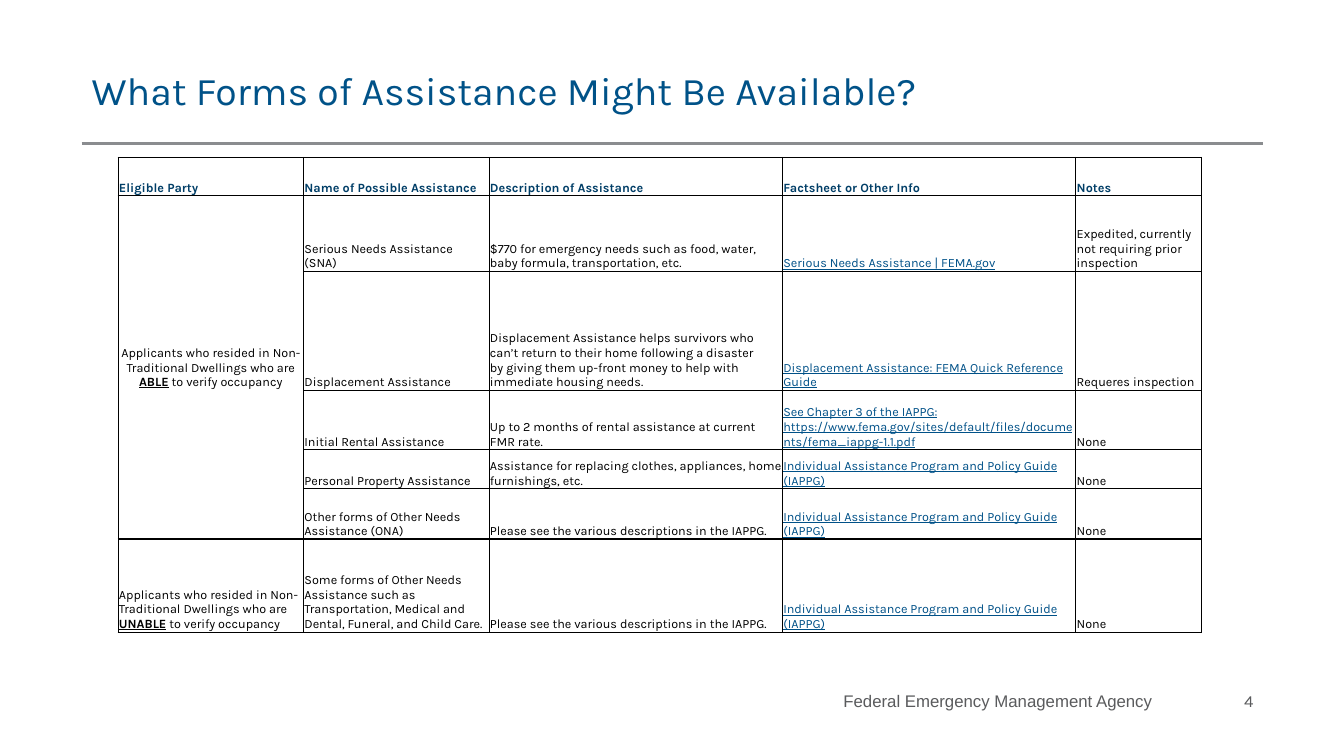
from pptx import Presentation
from pptx.dml.color import RGBColor
from pptx.enum.shapes import MSO_CONNECTOR as Connector
from pptx.enum.text import MSO_ANCHOR as Anchor, MSO_AUTO_SIZE as AutoSize, PP_ALIGN as Align
from pptx.oxml import parse_xml
from pptx.oxml.ns import nsdecls
from pptx.util import Inches, Pt

BLACK, GRAY, RULE_GRAY = "000000", "5A5B5D", "8A8C8F"
TITLE_BLUE, HEADER_BLUE, LINK_BLUE = "005288", "003E67", "005188"
THIN, THICK = 0.5, 1.5
LINK_COLUMN, MERGED_ROWS = 3, (1, 5)

GUIDE = "Individual Assistance Program and Policy Guide (IAPPG)"
SEE_GUIDE = "Please see the various descriptions in the IAPPG."


def color(hex_value):
    return RGBColor.from_string(hex_value)


def applicants(ability):
    return [
        ("Applicants who resided in Non-Traditional Dwellings who are ", {}),
        (ability, {"bold": True, "underline": True}),
        (" to verify occupancy", {}),
    ]


COLUMN_WIDTHS = [1.84, 1.84, 2.91, 2.91, 1.25]
ROW_HEIGHTS = [0.38, 0.75, 1.18, 0.59, 0.39, 0.5, 0.92]
ASSISTANCE = [
    ["Eligible Party", "Name of Possible Assistance", "Description of Assistance",
     "Factsheet or Other Info", "Notes"],
    [applicants("ABLE"), "Serious Needs Assistance (SNA)",
     "$770 for emergency needs such as food, water, baby formula, transportation, etc.",
     "Serious Needs Assistance | FEMA.gov",
     "Expedited, currently not requiring prior inspection"],
    [None, "Displacement Assistance",
     "Displacement Assistance helps survivors who can’t return to their home following a "
     "disaster \nby giving them up-front money to help with immediate housing needs.",
     "Displacement Assistance: FEMA Quick Reference Guide", "Requeres inspection"],
    [None, "Initial Rental Assistance",
     "Up to 2 months of rental assistance at current FMR rate.",
     "See Chapter 3 of the IAPPG: "
     "https://www.fema.gov/sites/default/files/documents/fema_iappg-1.1.pdf", "None"],
    [None, "Personal Property Assistance",
     "Assistance for replacing clothes, appliances, home furnishings, etc.", GUIDE, "None"],
    [None, "Other forms of Other Needs Assistance (ONA)", SEE_GUIDE, GUIDE, "None"],
    [applicants("UNABLE"),
     "Some forms of Other Needs Assistance such as Transportation, Medical and Dental, "
     "Funeral, and Child Care.", SEE_GUIDE, GUIDE, "None"],
]


class SlideBuilder:
    def __init__(self, slide, font="Karla"):
        self.slide = slide
        self.font = font

    def add_text(self, paragraph, runs, text_color, **format_values):
        """Add a string or (text, format) pairs; a newline becomes a line break."""
        for text, extra in [(runs, {})] if isinstance(runs, str) else runs:
            for index, line in enumerate(text.split("\n")):
                if index:
                    paragraph.add_line_break()
                run = paragraph.add_run()
                run.text = line
                run.font.color.rgb = color(text_color)
                for name, value in {"name": self.font, **format_values, **extra}.items():
                    setattr(run.font, name, value)

    def place(self, shape, left, top, width, height):
        for name, value in {"left": left, "top": top, "width": width, "height": height}.items():
            setattr(shape, name, Inches(value))

    def title(self, text, *box):
        heading = self.slide.shapes.title
        self.place(heading, *box)
        frame = heading.text_frame
        frame.auto_size = AutoSize.NONE
        frame.vertical_anchor = Anchor.MIDDLE
        frame.paragraphs[0].alignment = Align.LEFT
        self.add_text(frame.paragraphs[0], text, TITLE_BLUE, size=Pt(28))

    def footer(self, text, *box, **format_values):
        frame = self.slide.shapes.add_textbox(*map(Inches, box)).text_frame
        frame.word_wrap = True
        frame.vertical_anchor = Anchor.MIDDLE
        frame.paragraphs[0].alignment = Align.RIGHT
        self.add_text(frame.paragraphs[0], text, GRAY, size=Pt(12), **format_values)

    def rule(self, left, right, y):
        line = self.slide.shapes.add_connector(
            Connector.STRAIGHT, Inches(left), Inches(y), Inches(right), Inches(y))
        line.line.color.rgb = color(RULE_GRAY)
        line.line.width = Pt(2)
        line._element.spPr.append(parse_xml(f"<a:effectLst {nsdecls('a')}/>"))

    def borders(self, cell, top, bottom):
        properties = cell._tc.get_or_add_tcPr()
        for side, width in {"L": THIN, "R": THIN, "T": top, "B": bottom}.items():
            properties.append(parse_xml(
                f'<a:ln{side} {nsdecls("a")} w="{Pt(width)}"><a:solidFill>'
                f'<a:srgbClr val="{BLACK}"/></a:solidFill></a:ln{side}>'))

    def table(self, rows, left, top):
        table = self.slide.shapes.add_table(
            len(rows), len(COLUMN_WIDTHS), Inches(left), Inches(top),
            Inches(sum(COLUMN_WIDTHS)), Inches(sum(ROW_HEIGHTS))).table
        table.first_row = table.horz_banding = False
        for column, width in zip(table.columns, COLUMN_WIDTHS):
            column.width = Inches(width)
        first, last = MERGED_ROWS
        for r, (row, height) in enumerate(zip(rows, ROW_HEIGHTS)):
            table.rows[r].height = Inches(height)
            for c, content in enumerate(row):
                cell = table.cell(r, c)
                self.borders(cell, THICK if r == last + 1 else THIN,
                             THICK if r == last else THIN)
                self.cell(cell, content, header=r == 0, link=c == LINK_COLUMN)
        eligible = table.cell(first, 0)
        eligible.merge(table.cell(last, 0))
        eligible.vertical_anchor = Anchor.MIDDLE
        eligible.text_frame.paragraphs[0].alignment = Align.CENTER

    def cell(self, cell, content, header, link):
        cell.fill.background()
        cell.vertical_anchor = Anchor.BOTTOM
        margins = {"left": 0.01, "top": 0.01, "right": 0.01, "bottom": 0}
        for side, value in margins.items():
            setattr(cell, f"margin_{side}", Inches(value))
        if content is None:
            return
        is_link = link and not header
        text_color = HEADER_BLUE if header else LINK_BLUE if is_link else BLACK
        self.add_text(cell.text_frame.paragraphs[0], content, text_color,
                      size=Pt(9), bold=header, underline=is_link)


def main():
    deck = Presentation()
    deck.slide_width, deck.slide_height = Inches(13.33), Inches(7.5)
    builder = SlideBuilder(deck.slides.add_slide(deck.slide_layouts[5]))
    builder.rule(0.81, 12.53, 1.42)
    builder.title("What Forms of Assistance Might Be Available?", 0.81, 0.49, 11.72, 0.81)
    builder.table(ASSISTANCE, 1.17, 1.56)
    builder.footer("Federal Emergency Management Agency", 6.67, 6.75, 4.86, 0.4, name="Arial")
    builder.footer("4", 11.53, 6.75, 1, 0.4)
    deck.save("out.pptx")


if __name__ == "__main__":
    main()
